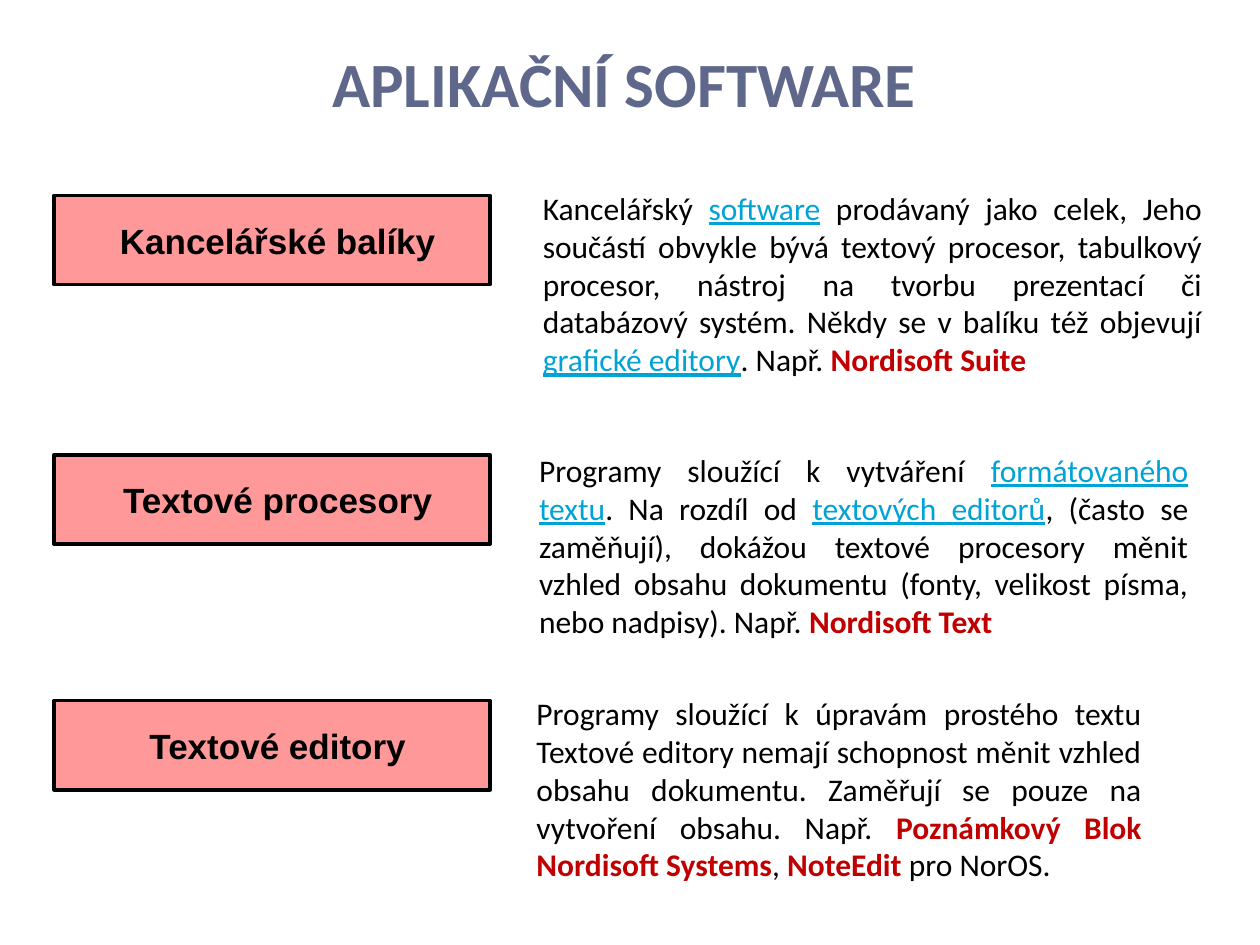
import pptx
import pptx.util
import pptx.dml.color
import pptx.enum.shapes
import pptx.enum.text

Inches = pptx.util.Inches
Pt = pptx.util.Pt
Align = pptx.enum.text.PP_ALIGN
Anchor = pptx.enum.text.MSO_ANCHOR

TITLE = "APLIKAČNÍ SOFTWARE"
STYLES = {
    "title": {"size": Pt(36), "name": "Calibri", "bold": True, "color": "5F688B"},
    "label": {"size": Pt(20), "name": "Arial", "bold": True, "color": "000000"},
    "plain": {"size": Pt(18), "name": "Calibri", "bold": False, "color": "000000"},
    "term": {"size": Pt(18), "name": "Calibri", "underline": True, "color": "00A3D6"},
    "example": {"size": Pt(18), "name": "Calibri", "bold": True, "color": "C00000"},
}
SECTIONS = [
    {
        "label": "Kancelářské balíky",
        "label_top": 1.55,
        "text_box": (4.21, 1.45, 5.43, 1.62),
        "runs": [
            ("Kancelářský ", "plain"),
            ("software", "term"),
            (" prodávaný jako celek, Jeho součástí obvykle bývá textový procesor, "
             "tabulkový procesor, nástroj na tvorbu prezentací či databázový systém. "
             "Někdy se v balíku též objevují ", "plain"),
            ("grafické editory", "term"),
            (". Např. ", "plain"),
            ("Nordisoft Suite", "example"),
        ],
    },
    {
        "label": "Textové procesory",
        "label_top": 3.61,
        "text_box": (4.18, 3.53, 5.35, 1.62),
        "runs": [
            ("Programy sloužící k vytváření ", "plain"),
            ("formátovaného textu", "term"),
            (". Na rozdíl od ", "plain"),
            ("textových editorů", "term"),
            (", (často se zaměňují), dokážou textové procesory měnit vzhled obsahu "
             "dokumentu (fonty, velikost písma, nebo nadpisy). Např. ", "plain"),
            ("Nordisoft Text", "example"),
        ],
    },
    {
        "label": "Textové editory",
        "label_top": 5.56,
        "text_box": (4.16, 5.46, 5, 1.62),
        "runs": [
            ("Programy sloužící k úpravám prostého textu Textové editory nemají "
             "schopnost měnit vzhled obsahu dokumentu. Zaměřují se pouze na "
             "vytvoření obsahu. Např. ", "plain"),
            ("Poznámkový Blok Nordisoft Systems", "example"),
            (", ", "plain"),
            ("NoteEdit", "example"),
            (" pro NorOS.", "plain"),
        ],
    },
]


def rgb(value):
    return pptx.dml.color.RGBColor.from_string(value)


def write(paragraph, runs, alignment):
    paragraph.alignment = alignment
    for text, style in runs:
        run = paragraph.add_run()
        run.text = text
        for attribute, value in STYLES[style].items():
            if attribute == "color":
                run.font.color.rgb = rgb(value)
            else:
                setattr(run.font, attribute, value)


def add_title(slide):
    title = slide.shapes.title
    place = {"left": 0.35, "top": 0.32, "width": 9.21, "height": 0.68}
    for attribute, value in place.items():
        setattr(title, attribute, Inches(value))
    title.text_frame.vertical_anchor = Anchor.BOTTOM
    paragraph = title.text_frame.paragraphs[0]
    paragraph.line_spacing = Pt(20)
    write(paragraph, [(TITLE, "title")], Align.CENTER)


def add_label(slide, text, top):
    label = slide.shapes.add_shape(
        pptx.enum.shapes.MSO_SHAPE.RECTANGLE,
        Inches(0.43), Inches(top), Inches(3.46), Inches(0.71))
    label.shadow.inherit = False
    label.fill.solid()
    label.fill.fore_color.rgb = rgb("FF9999")
    label.line.color.rgb = rgb("000000")
    label.line.width = Pt(2)
    label.text_frame.vertical_anchor = Anchor.MIDDLE
    paragraph = label.text_frame.paragraphs[0]
    write(paragraph, [(text, "label")], Align.CENTER)
    paragraph._p.get_or_add_pPr().set("marL", str(Inches(0.09)))


def add_description(slide, box, runs):
    description = slide.shapes.add_textbox(*map(Inches, box))
    frame = description.text_frame
    frame.word_wrap = True
    frame.auto_size = pptx.enum.text.MSO_AUTO_SIZE.SHAPE_TO_FIT_TEXT
    write(frame.paragraphs[0], runs, Align.JUSTIFY)


def main():
    presentation = pptx.Presentation()
    presentation.slide_width = Inches(10)
    presentation.slide_height = Inches(7.5)
    slide = presentation.slides.add_slide(presentation.slide_layouts[5])
    add_title(slide)
    for section in SECTIONS:
        add_label(slide, section["label"], section["label_top"])
        add_description(slide, section["text_box"], section["runs"])
    presentation.save("out.pptx")


if __name__ == "__main__":
    main()
